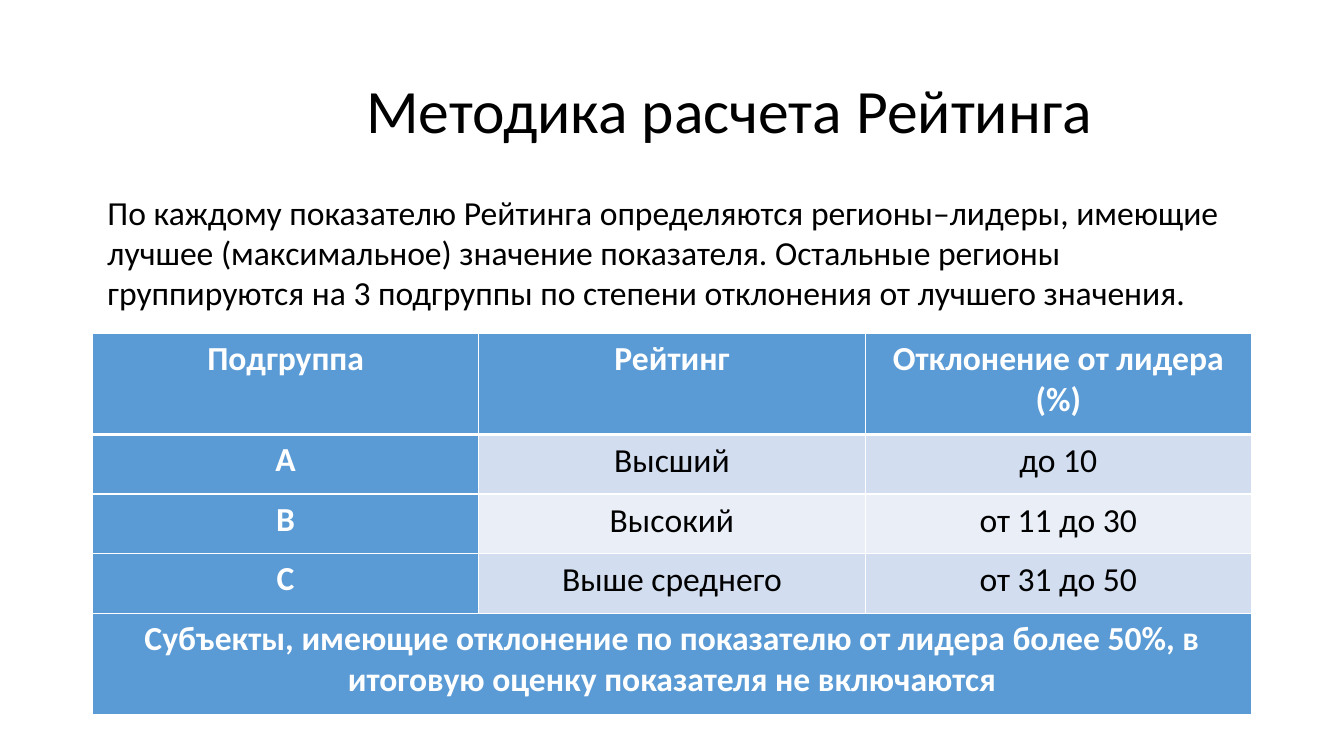
from dataclasses import dataclass

from lxml.etree import SubElement
from pptx import Presentation
from pptx.dml.color import RGBColor
from pptx.enum.text import MSO_ANCHOR, MSO_AUTO_SIZE, PP_ALIGN
from pptx.oxml.ns import qn
from pptx.util import Cm, Pt


@dataclass(frozen=True)
class Theme:
    font: str = "Calibri"
    title_size: int = 44
    body_size: int = 24
    ink: str = "000000"
    white: str = "FFFFFF"
    accent: str = "5B9BD5"
    bands: tuple = ("D2DEEF", "EAEFF7")


theme = Theme()


def write(frame, text, size=theme.body_size, color=theme.ink, bold=False,
          align=PP_ALIGN.CENTER, spacing=1.0):
    paragraph = frame.paragraphs[0]
    paragraph.alignment = align
    paragraph.line_spacing = spacing
    run = paragraph.add_run()
    run.text = text
    run.font.name = theme.font
    run.font.size = Pt(size)
    run.font.bold = bold
    run.font.color.rgb = RGBColor.from_string(color)
    return paragraph


def draw_borders(cell, top, bottom):
    """Draw white cell borders; top and bottom are widths in points."""
    properties = cell._tc.get_or_add_tcPr()
    sides = (("lnL", 1), ("lnR", 1), ("lnT", top), ("lnB", bottom))
    for position, (side, width) in enumerate(sides):
        line = SubElement(properties, qn(f"a:{side}"), w=str(Pt(width)))
        fill = SubElement(line, qn("a:solidFill"))
        SubElement(fill, qn("a:srgbClr"), val=theme.white)
        properties.insert(position, line)


prs = Presentation()
prs.slide_width, prs.slide_height = Cm(33.87), Cm(19.05)
slide = prs.slides.add_slide(prs.slide_layouts[5])
left, width = Cm(2.33), Cm(29.21)

title = slide.shapes.title
title.left, title.top, title.width, title.height = left, Cm(1.01), width, Cm(3.68)
title.text_frame.auto_size = MSO_AUTO_SIZE.NONE
title.text_frame.vertical_anchor = MSO_ANCHOR.MIDDLE
heading = write(title.text_frame, "\t Методика расчета Рейтинга",
                size=theme.title_size, spacing=0.9)
tab_stops = SubElement(heading._p.get_or_add_pPr(), qn("a:tabLst"))
SubElement(tab_stops, qn("a:tab"), pos=str(Cm(2.54)), algn="l")

intro = slide.shapes.add_textbox(left, Cm(4.7), width, Cm(3.33)).text_frame
intro.word_wrap = True
intro.auto_size = MSO_AUTO_SIZE.SHAPE_TO_FIT_TEXT
explanation = write(
    intro,
    "По каждому показателю Рейтинга определяются регионы–лидеры, имеющие "
    "лучшее (максимальное) значение показателя. Остальные регионы "
    "группируются на 3 подгруппы по степени отклонения от лучшего значения.",
    align=PP_ALIGN.LEFT)
explanation._p.get_or_add_pPr().set("marL", str(Cm(0.13)))

rating_rows = [
    ("Подгруппа", "Рейтинг", "Отклонение от лидера (%)"),
    ("A", "Высший", "до 10"),
    ("B", "Высокий", "от 11 до 30"),
    ("C", "Выше среднего", "от 31 до 50"),
    ("Субъекты, имеющие отклонение по показателю от лидера более 50%, "
     "в итоговую оценку показателя не включаются", "", ""),
]
row_heights = (2.54, 1.5, 1.5, 1.5, 2.56)
last = len(rating_rows) - 1

ratings = slide.shapes.add_table(len(rating_rows), 3, left, Cm(8.41),
                                 width, Cm(sum(row_heights))).table
ratings.horz_banding = False
ratings.cell(last, 0).merge(ratings.cell(last, 2))

for r, (row, height) in enumerate(zip(rating_rows, row_heights)):
    ratings.rows[r].height = Cm(height)
    for c, text in enumerate(row):
        cell = ratings.cell(r, c)
        is_value = 0 < r < last and c > 0
        fill = theme.bands[(r - 1) % 2] if is_value else theme.accent
        cell.fill.solid()
        cell.fill.fore_color.rgb = RGBColor.from_string(fill)
        draw_borders(cell, top=3 if r == 1 else 1, bottom=3 if r == 0 else 1)
        if is_value:
            cell.margin_left = cell.margin_right = Cm(0.18)
            cell.margin_top = cell.margin_bottom = 0
            write(cell.text_frame, text, spacing=1.15)
        elif text:
            write(cell.text_frame, text, color=theme.white, bold=True)

prs.save("out.pptx")
